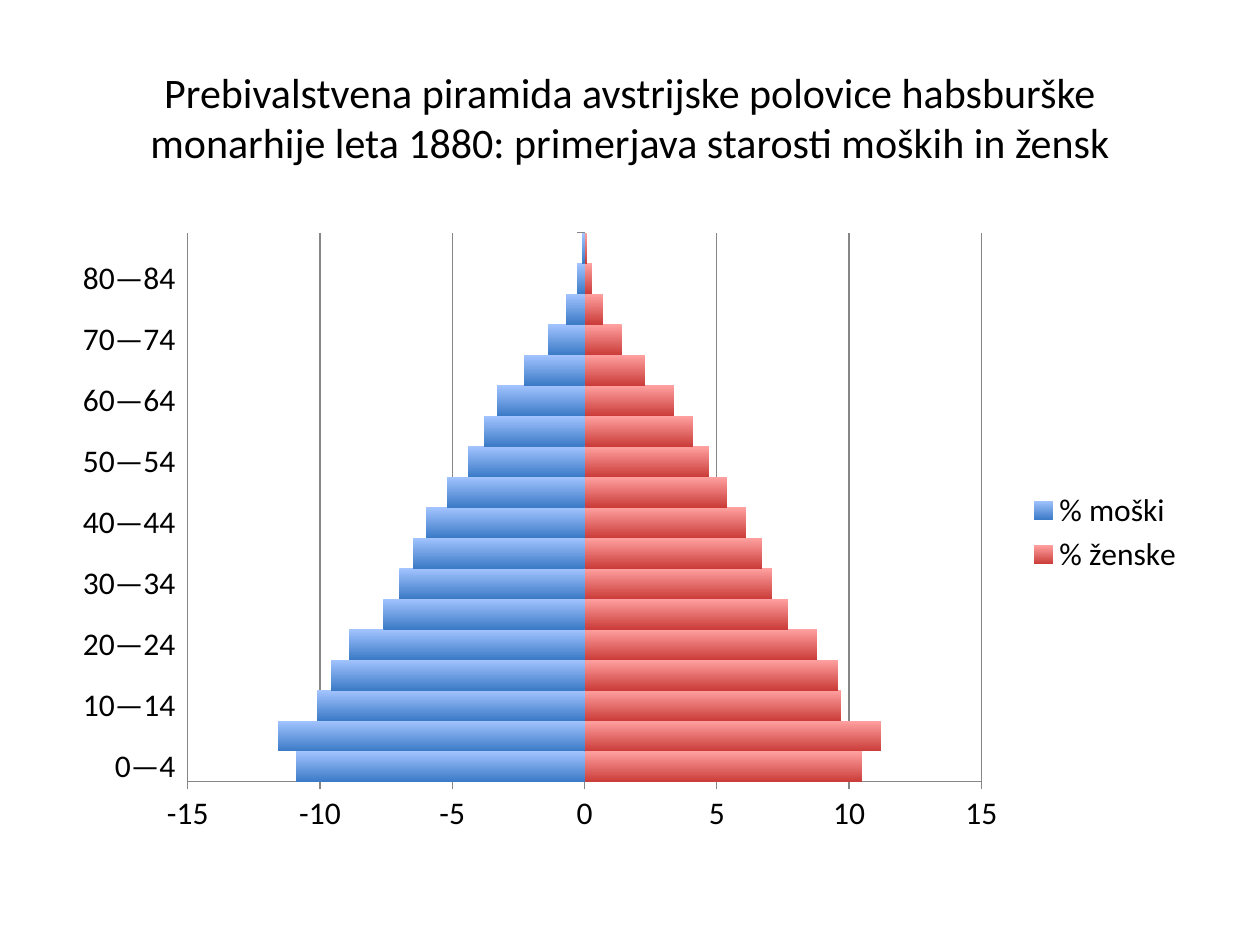
from pptx import Presentation
from pptx.chart.data import CategoryChartData as Data
from pptx.dml.color import RGBColor as RGB
from pptx.enum.chart import XL_CHART_TYPE as Kind, XL_LEGEND_POSITION as Side
from pptx.enum.chart import XL_TICK_LABEL_POSITION as Spot, XL_TICK_MARK as Tick
from pptx.enum.text import MSO_ANCHOR as Anchor, PP_ALIGN as Align
from pptx.oxml import parse_xml
from pptx.oxml.ns import nsdecls, qn
from pptx.util import Inches, Pt

WIDE, HIGH = Inches(10), Inches(7.5)
HUES = {"text": "000000", "grid": "868686"}
TITLE = ("Prebivalstvena piramida avstrijske polovice habsburške "
         "monarhije leta 1880: primerjava starosti moških in žensk")
AGES = [f"{age}—{age + 4}" for age in range(0, 85, 5)] + ["85+"]
MEN = [10.9, 11.6, 10.1, 9.6, 8.9, 7.6, 7.0, 6.5, 6.0, 5.2,
       4.4, 3.8, 3.3, 2.3, 1.4, 0.7, 0.3, 0.1]
WOMEN = [10.5, 11.2, 9.7, 9.6, 8.8, 7.7, 7.1, 6.7, 6.1, 5.4,
         4.7, 4.1, 3.4, 2.3, 1.4, 0.7, 0.3, 0.1]
SERIES = [
    ("% moški", [-share for share in MEN], ("A3C4FF", "3C7BC7")),
    ("% ženske", WOMEN, ("FFA2A1", "CB3D3A")),
]
PLOT = {"x": 0.11, "y": 0.02, "w": 0.7, "h": 0.88}


def assign(item, values):
    for name, value in values.items():
        setattr(item, name, value)


def place(left, top, width, height):
    return (int(WIDE * left), int(HIGH * top),
            int(WIDE * width), int(HIGH * height))


def style(font, size):
    assign(font, {"name": "Calibri", "size": Pt(size), "bold": False})
    font.color.rgb = RGB.from_string(HUES["text"])


def add_title(slide):
    frame = slide.shapes.add_textbox(*place(0.05, 0.04, 0.9, 1 / 6)).text_frame
    assign(frame, {"word_wrap": True, "vertical_anchor": Anchor.MIDDLE})
    para = frame.paragraphs[0]
    assign(para, {"text": TITLE, "alignment": Align.CENTER})
    style(para.font, 24)


def draw_line(form):
    form.line.width = Pt(0.75)
    form.line.color.rgb = RGB.from_string(HUES["grid"])


def set_axes(chart):
    ages, scale = chart.category_axis, chart.value_axis
    assign(ages, {"tick_label_position": Spot.LOW,
                  "major_tick_mark": Tick.OUTSIDE,
                  "minor_tick_mark": Tick.NONE,
                  "has_major_gridlines": False})
    assign(scale, {"minimum_scale": -15, "maximum_scale": 15,
                   "major_unit": 5, "has_major_gridlines": True,
                   "major_tick_mark": Tick.OUTSIDE,
                   "minor_tick_mark": Tick.NONE})
    assign(scale.tick_labels, {"number_format": "General",
                               "number_format_is_linked": False})
    for form in (ages.format, scale.format, scale.major_gridlines.format):
        draw_line(form)
    skip = parse_xml(f'<c:tickLblSkip {nsdecls("c")} val="2"/>')
    ages._element.find(qn("c:noMultiLvlLbl")).addprevious(skip)


def set_plot(chart):
    area = chart._chartSpace.chart.plotArea
    for old in area.findall(qn("c:layout")):
        area.remove(old)
    sizes = "".join(f'<c:{key} val="{val}"/>' for key, val in PLOT.items())
    area.insert(0, parse_xml(
        f'<c:layout {nsdecls("c")}><c:manualLayout>'
        '<c:layoutTarget val="inner"/><c:xMode val="edge"/>'
        f'<c:yMode val="edge"/>{sizes}</c:manualLayout></c:layout>'))


def shade(bars, hues):
    bars.invert_if_negative = False
    fill = bars.format.fill
    fill.gradient()
    fill.gradient_angle = 270
    for stop, hue in zip(fill.gradient_stops, hues):
        stop.color.rgb = RGB.from_string(hue)
    bars.format.line.fill.background()


def add_pyramid(slide):
    data = Data(number_format="General")
    data.categories = AGES
    for name, shares, _ in SERIES:
        data.add_series(name, shares)
    chart = slide.shapes.add_chart(
        Kind.BAR_STACKED, *place(0.05, 0.2333, 0.9, 0.66), data).chart
    style(chart.font, 18)
    assign(chart, {"has_title": False, "has_legend": True})
    assign(chart.legend, {"position": Side.RIGHT, "include_in_layout": False})
    plot = chart.plots[0]
    assign(plot, {"gap_width": 0, "overlap": 100, "vary_by_categories": False})
    for bars, (_, _, hues) in zip(plot.series, SERIES):
        shade(bars, hues)
    set_axes(chart)
    set_plot(chart)


def main():
    deck = Presentation()
    assign(deck, {"slide_width": WIDE, "slide_height": HIGH})
    slide = deck.slides.add_slide(deck.slide_layouts[6])
    add_title(slide)
    add_pyramid(slide)
    deck.save("out.pptx")


if __name__ == "__main__":
    main()
